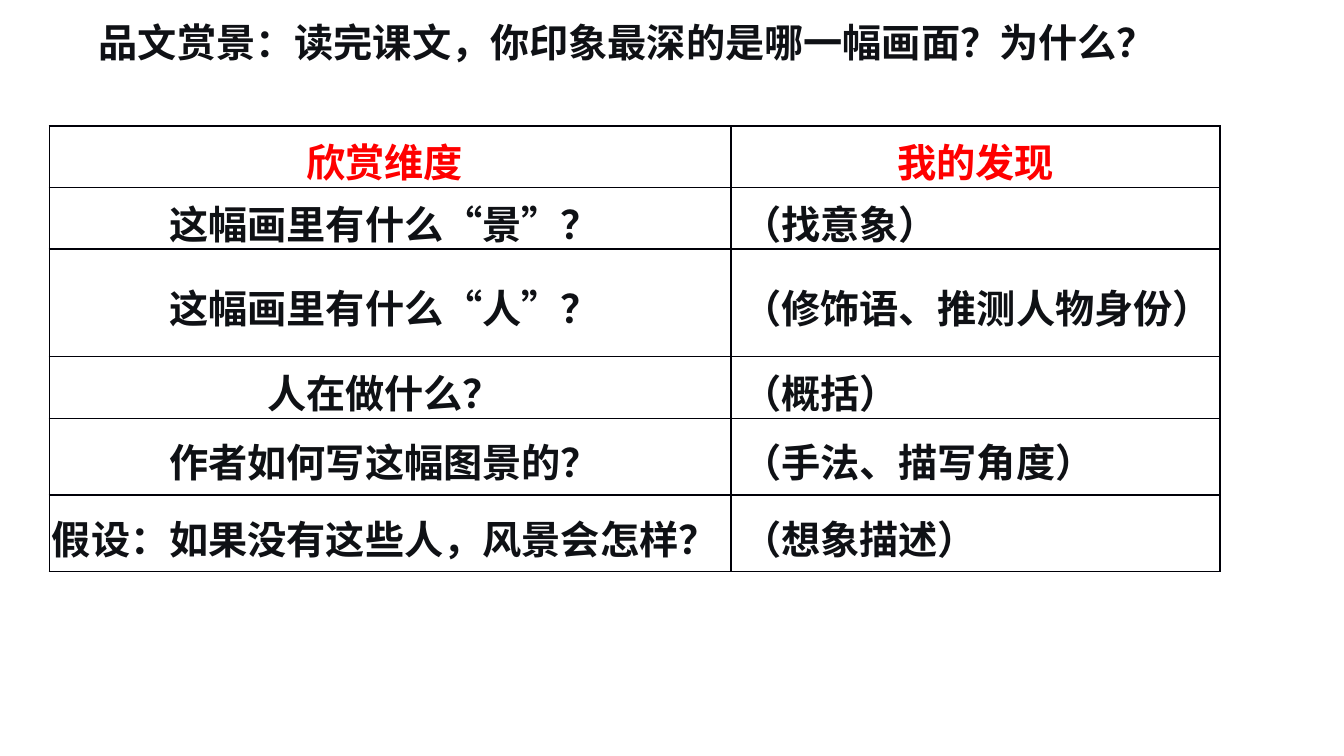
from lxml import etree
from pptx import Presentation, util as u
from pptx.dml.color import RGBColor
from pptx.enum import text
from pptx.oxml.ns import qn

QUESTION = "品文赏景：读完课文，你印象最深的是哪一幅画面？为什么？"
HEADINGS = ("欣赏维度", "我的发现")
PROMPTS = [
    ("这幅画里有什么“景”？", "（找意象）"),
    ("这幅画里有什么“人”？", "（修饰语、推测人物身份）"),
    ("人在做什么？", "（概括）"),
    ("作者如何写这幅图景的？", "（手法、描写角度）"),
    ("假设：如果没有这些人，风景会怎样？", "（想象描述）"),
]
COLUMN_WIDTHS = (6.76, 4.85)
ROW_HEIGHTS = (0.61, 0.61, 1.07, 0.61, 0.76, 0.76)
LEFT, TABLE_TOP = 0.49, 1.25
THICK, THIN = 1.5, 1

FONT = "Noto Sans CJK SC"
INK = RGBColor(0x0F, 0x11, 0x15)
RED = RGBColor(0xFF, 0x00, 0x00)
RULE = RGBColor(0x00, 0x00, 0x08)


def write(frame, words, color, align):
    frame.text = words
    paragraph = frame.paragraphs[0]
    paragraph.alignment = align
    for run in paragraph.runs:
        run.font.size, run.font.bold, run.font.name = u.Pt(28), True, FONT
        run.font.color.rgb = color
        east_asian = etree.SubElement(run._r.get_or_add_rPr(), qn("a:ea"))
        east_asian.set("typeface", FONT)
    return paragraph


def rule_cell(cell, widths):
    properties = cell._tc.get_or_add_tcPr()
    for place, (side, width) in enumerate(widths.items()):
        line = etree.Element(qn("a:ln" + side), w=str(u.Pt(width)))
        fill = etree.SubElement(line, qn("a:solidFill"))
        etree.SubElement(fill, qn("a:srgbClr"), val=str(RULE))
        properties.insert(place, line)


def add_question(slide):
    title = slide.shapes.title
    title.left, title.top = u.Inches(LEFT), u.Inches(0.13)
    title.width, title.height = u.Inches(10.9), u.Inches(0.57)
    frame = title.text_frame
    frame.word_wrap = True
    frame.auto_size = text.MSO_AUTO_SIZE.NONE
    frame.vertical_anchor = text.MSO_ANCHOR.MIDDLE
    frame.margin_top = frame.margin_bottom = 0
    paragraph = write(frame, QUESTION, INK, text.PP_ALIGN.LEFT)
    paragraph._p.get_or_add_pPr().set("indent", str(u.Inches(0.39)))


def add_prompts(slide):
    rows = [HEADINGS] + PROMPTS
    table = slide.shapes.add_table(
        len(rows), len(HEADINGS), u.Inches(LEFT), u.Inches(TABLE_TOP),
        u.Inches(sum(COLUMN_WIDTHS)), u.Inches(sum(ROW_HEIGHTS))).table
    table.first_row = table.horz_banding = False
    for column, width in zip(table.columns, COLUMN_WIDTHS):
        column.width = u.Inches(width)
    for r, (entries, height) in enumerate(zip(rows, ROW_HEIGHTS)):
        table.rows[r].height = u.Inches(height)
        for c, entry in enumerate(entries):
            cell = table.cell(r, c)
            cell.fill.background()
            cell.vertical_anchor = text.MSO_ANCHOR.MIDDLE
            cell.margin_left = u.Inches(0.11 * c)
            cell.margin_right = u.Inches(0 if r and c else 0.11)
            cell.margin_top, cell.margin_bottom = u.Inches(0.14), 0
            centred = r == 0 or c == 0
            paragraph = write(
                cell.text_frame, entry, INK if r else RED,
                text.PP_ALIGN.CENTER if centred else text.PP_ALIGN.LEFT)
            paragraph.line_spacing = 0.82
            rule_cell(cell, {
                "L": THIN if c else THICK,
                "R": THICK if c else THIN,
                "T": THIN if r else THICK,
                "B": THICK if r >= len(rows) - 2 else THIN,
            })


deck = Presentation()
deck.slide_width, deck.slide_height = u.Inches(13.33), u.Inches(7.5)
page = deck.slides.add_slide(deck.slide_layouts.get_by_name("Title Only"))
add_question(page)
add_prompts(page)
deck.save("out.pptx")
